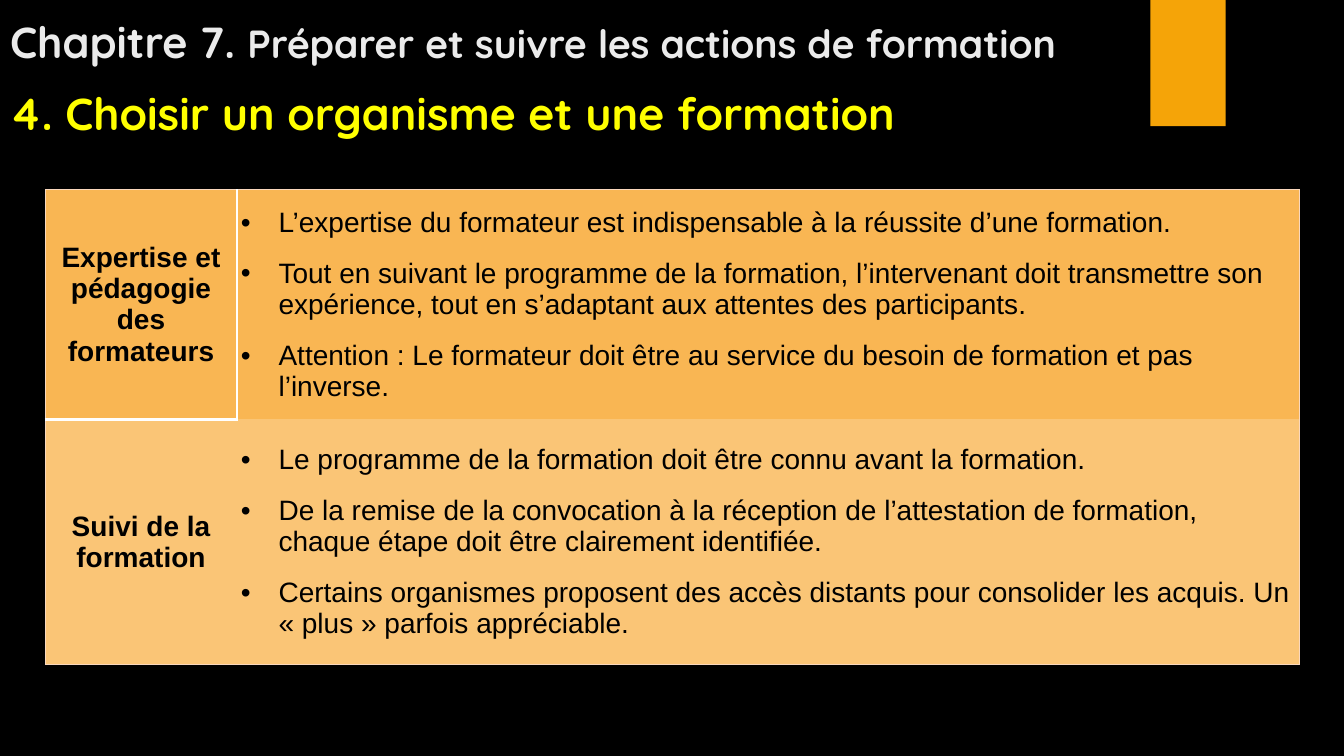
from lxml.etree import SubElement
from pptx import Presentation
from pptx.dml.color import RGBColor
from pptx.enum.shapes import MSO_SHAPE
from pptx.enum.text import MSO_ANCHOR, MSO_AUTO_SIZE, PP_ALIGN
from pptx.oxml.ns import qn
from pptx.util import Cm, Pt

BLACK = RGBColor(0x00, 0x00, 0x00)
WHITE = RGBColor(0xFF, 0xFF, 0xFF)
ORANGE = RGBColor(0xF5, 0xA4, 0x08)
LIGHT_GREY = RGBColor(0xEB, 0xEB, 0xEB)
YELLOW = RGBColor(0xFF, 0xFF, 0x00)
AMBER = RGBColor(0xF9, 0xB6, 0x53)
PALE_AMBER = RGBColor(0xFA, 0xC5, 0x76)
PEACH = RGBColor(0xFA, 0xD8, 0xBD)

THIN, MEDIUM, THICK = (PEACH, 0.75), (WHITE, 1.5), (WHITE, 2.25)

CRITERIA = [
    ("Expertise et pédagogie des formateurs", [
        "L’expertise du formateur est indispensable à la réussite d’une formation.",
        "Tout en suivant le programme de la formation, l’intervenant doit transmettre son "
        "expérience, tout en s’adaptant aux attentes des participants.",
        "Attention : Le formateur doit être au service du besoin de formation et pas l’inverse.",
    ]),
    ("Suivi de la formation", [
        "Le programme de la formation doit être connu avant la formation.",
        "De la remise de la convocation à la réception de l’attestation de formation, "
        "chaque étape doit être clairement identifiée.",
        "Certains organismes proposent des accès distants pour consolider les acquis. "
        "Un « plus » parfois appréciable.",
    ]),
]
ROW_HEIGHTS = [5.79, 6.17]
ROW_FILLS = [AMBER, PALE_AMBER]
BORDERS = [
    [{"lnL": THIN, "lnR": MEDIUM, "lnT": THIN, "lnB": THICK},
     {"lnL": MEDIUM, "lnR": THIN, "lnT": THIN}],
    [{"lnL": THIN, "lnT": THICK, "lnB": THIN},
     {"lnR": THIN, "lnB": THIN}],
]


def write_heading(shape, top, runs):
    """Place a full-width heading and fill it with (text, size, colour) runs."""
    shape.left, shape.top, shape.width, shape.height = Cm(0), Cm(top), Cm(32.77), Cm(1.8)
    frame = shape.text_frame
    frame.word_wrap = True
    frame.auto_size = MSO_AUTO_SIZE.NONE
    frame.vertical_anchor = MSO_ANCHOR.BOTTOM
    paragraph = frame.paragraphs[0]
    paragraph.alignment = PP_ALIGN.LEFT
    for text, size, color in runs:
        run = paragraph.add_run()
        run.text = text
        run.font.color.rgb = color
        for name, value in {"name": "Quicksand", "size": Pt(size), "bold": True}.items():
            setattr(run.font, name, value)


def format_cell(cell, fill, borders):
    cell.vertical_anchor = MSO_ANCHOR.MIDDLE
    margins = {"margin_left": 0.1, "margin_right": 0.1, "margin_top": 0, "margin_bottom": 0}
    for name, value in margins.items():
        setattr(cell, name, Cm(value))
    properties = cell._tc.get_or_add_tcPr()
    for side in ("lnL", "lnR", "lnT", "lnB"):
        if side in borders:
            color, width = borders[side]
            line = SubElement(properties, qn(f"a:{side}"), w=str(Pt(width)))
            SubElement(SubElement(line, qn("a:solidFill")), qn("a:srgbClr"), val=str(color))
        else:
            line = SubElement(properties, qn(f"a:{side}"), w="0")
            SubElement(line, qn("a:noFill"))
    cell.fill.solid()
    cell.fill.fore_color.rgb = fill


deck = Presentation()
deck.slide_width, deck.slide_height = Cm(33.87), Cm(19.05)
slide = deck.slides.add_slide(deck.slide_layouts[5])
slide.background.fill.solid()
slide.background.fill.fore_color.rgb = BLACK

accent_bar = slide.shapes.add_shape(MSO_SHAPE.RECTANGLE, Cm(28.99), Cm(0), Cm(1.9), Cm(3.18))
accent_bar.shadow.inherit = False
accent_bar.fill.solid()
accent_bar.fill.fore_color.rgb = ORANGE
accent_bar.line.fill.background()

write_heading(slide.shapes.title, 0.03, [
    ("Chapitre 7. ", 31, LIGHT_GREY),
    ("Préparer et suivre les actions de formation", 28, LIGHT_GREY),
])
section = slide.shapes.add_textbox(Cm(0), Cm(1.83), Cm(32.77), Cm(1.8))
write_heading(section, 1.83, [("4. Choisir un organisme et une formation", 32, YELLOW)])

criteria_table = slide.shapes.add_table(
    len(CRITERIA), 2, Cm(1.14), Cm(4.78), Cm(31.6), Cm(sum(ROW_HEIGHTS))).table
criteria_table.first_row = criteria_table.horz_banding = False
for column, width in zip(criteria_table.columns, (4.83, 26.77)):
    column.width = Cm(width)

for row, (criterion, points) in enumerate(CRITERIA):
    criteria_table.rows[row].height = Cm(ROW_HEIGHTS[row])
    for col, texts in enumerate(([criterion], points)):
        cell = criteria_table.cell(row, col)
        format_cell(cell, ROW_FILLS[row], BORDERS[row][col])
        for index, text in enumerate(texts):
            frame = cell.text_frame
            paragraph = frame.add_paragraph() if index else frame.paragraphs[0]
            paragraph.text = text
            if col == 0:
                paragraph.alignment = PP_ALIGN.CENTER
            else:
                indent = paragraph._p.get_or_add_pPr()
                indent.set("marL", str(Cm(0.95)))
                indent.set("indent", str(Cm(-0.95)))
                SubElement(indent, qn("a:buFont"), typeface="Arial")
                SubElement(indent, qn("a:buChar"), char="•")
                paragraph.space_before = Pt(12 if index else 0)
                paragraph.space_after = Pt(2)
            paragraph.font.color.rgb = BLACK
            for name, value in {"name": "Arial", "size": Pt(20), "bold": col == 0}.items():
                setattr(paragraph.font, name, value)

deck.save("out.pptx")
